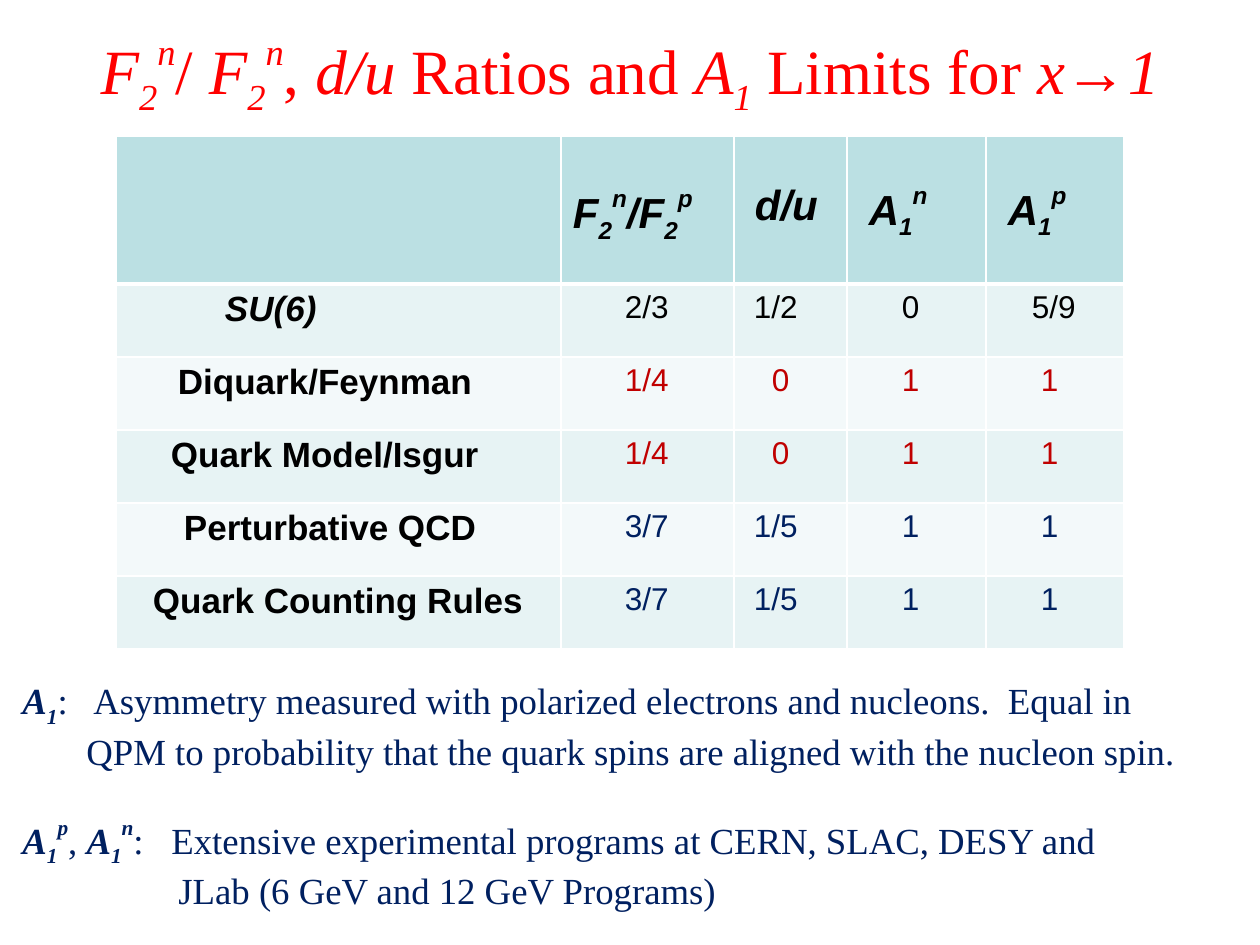
import pptx
import pptx.util
import pptx.dml.color
import pptx.enum.text
import pptx.oxml.ns
import lxml.etree

PX = 7257.14  # EMU per px
COLORS = {"red": "FF0000", "black": "000000", "navy": "002060", "crimson": "C00000",
          "white": "FFFFFF", "head": "BBE0E3", "odd": "E7F3F4", "even": "F3F9FA"}


def px(n):
    return pptx.util.Emu(round(n * PX))


def add_runs(p, runs, name, size, color, sup=50):
    """Add (text, marks) runs; marks: b bold, i italic, _ subscript, ^ superscript."""
    for text, marks in runs:
        r = p.add_run()
        r.text = text
        fmt = {"name": name, "size": pptx.util.Pt(size), "bold": "b" in marks, "italic": "i" in marks}
        for key, value in fmt.items():
            setattr(r.font, key, value)
        r.font.color.rgb = pptx.dml.color.RGBColor.from_string(COLORS[color])
        base = -25 if "_" in marks else sup if "^" in marks else 0
        if base:
            r._r.get_or_add_rPr().set("baseline", str(base * 1000))


prs = pptx.Presentation()
prs.slide_width, prs.slide_height = px(1260), px(945)
s = prs.slides.add_slide(prs.slide_layouts[6])

# Title
tf = s.shapes.add_textbox(px(42), px(21), px(1176), px(105)).text_frame
tf.word_wrap = True
tf.vertical_anchor = pptx.enum.text.MSO_ANCHOR.MIDDLE
p = tf.paragraphs[0]
p.alignment = pptx.enum.text.PP_ALIGN.CENTER
title = [("F", "i"), ("2", "i_"), ("n", "i^"), ("/", ""), (" F", "i"), ("2", "i_"), ("n", "i^"),
         (", ", ""), ("d/u", "i"), (" Ratios and ", ""), ("A", "i"), ("1", "i_"),
         (" Limits for ", ""), ("x", "i"), ("→", ""), ("1", "i")]
add_runs(p, title, "Times New Roman", 36, "red", sup=46)

# Table: each cell is (runs, left inset, top inset, size)
headers = [([], 12, 6, 24),
           ([("F", "bi"), ("2", "bi_"), ("n", "bi^"), ("/F", "bi"), ("2", "bi_"), ("p", "bi^")], 12, 50, 24),
           ([("d/u", "bi")], 21, 46, 24),
           ([("A", "bi"), ("1", "bi_"), ("n", "bi^")], 22, 46, 24),
           ([("A", "bi"), ("1", "bi_"), ("p", "bi^")], 22, 46, 24)]
models = [("SU(6)", "bi", 109, "black", ["2/3", "1/2", "0", "5/9"]),
          ("Diquark/Feynman", "b", 62, "crimson", ["1/4", "0", "1", "1"]),
          ("Quark Model/Isgur", "b", 55, "crimson", ["1/4", "0", "1", "1"]),
          ("Perturbative QCD", "b", 68, "navy", ["3/7", "1/5", "1", "1"]),
          ("Quark Counting Rules", "b", 37, "navy", ["3/7", "1/5", "1", "1"])]
insets = [64, 29, 55, 55]
digit = 9  # half the width by which a fraction exceeds a single digit

rows = [("black", headers)]
for model, marks, inset, color, values in models:
    cells = [([(model, marks)], inset, 6, 20)]
    for col, value in enumerate(values):
        shift = 0
        if col == 1:
            shift = -digit if "/" in value else digit
        elif col == 3 and "/" in value:
            shift = -digit
        cells.append(([(value, "")], insets[col] + shift, 6, 18))
    rows.append((color, cells))

widths = [445, 173, 113, 139, 138]
heights = [148] + [73] * len(models)
tbl = s.shapes.add_table(len(rows), len(widths), px(116), px(136), px(sum(widths)), px(sum(heights))).table
tbl.first_row = tbl.horz_banding = False
for column, width in zip(tbl.columns, widths):
    column.width = px(width)
for i, (color, cells) in enumerate(rows):
    tbl.rows[i].height = px(heights[i])
    fill = "head" if i == 0 else "odd" if i % 2 else "even"
    for j, (runs, left, top, size) in enumerate(cells):
        cell = tbl.cell(i, j)
        margins = {"margin_left": px(left), "margin_right": px(4), "margin_top": px(top)}
        for key, value in margins.items():
            setattr(cell, key, value)
        text_color = "black" if j == 0 else color
        add_runs(cell.text_frame.paragraphs[0], runs, "Arial", size, text_color)
        tcPr = cell._tc.get_or_add_tcPr()
        for side in "LRTB":
            thick = (i == 0 and side == "B") or (i == 1 and side == "T")
            ln = lxml.etree.SubElement(tcPr, pptx.oxml.ns.qn("a:ln" + side), w=str(38100 if thick else 12700))
            line = lxml.etree.SubElement(ln, pptx.oxml.ns.qn("a:solidFill"))
            lxml.etree.SubElement(line, pptx.oxml.ns.qn("a:srgbClr"), val=COLORS["white"])
        cell.fill.solid()
        cell.fill.fore_color.rgb = pptx.dml.color.RGBColor.from_string(COLORS[fill])

# Definitions: (runs, left indent, tab stop, space before in points)
notes = [([("A", "bi"), ("1", "bi_"),
           (":\tAsymmetry measured with polarized electrons and nucleons.  Equal in", "")], 0, 71, 0),
         ([("QPM to probability that the quark spins are aligned with the nucleon spin.", "")], 64, 0, 0),
         ([("A", "bi"), ("1", "bi_"), ("p", "bi^"), (", ", ""), ("A", "bi"), ("1", "bi_"), ("n", "bi^"),
           (":\tExtensive experimental programs at CERN, SLAC, DESY and", "")], 0, 149, 24),
         ([("JLab (6 GeV and 12 GeV Programs)", "")], 156, 0, 0)]
tf = s.shapes.add_textbox(px(10), px(672), px(1239), px(236)).text_frame
tf.word_wrap = True
for k, (runs, indent, tab, before) in enumerate(notes):
    p = tf.paragraphs[0] if k == 0 else tf.add_paragraph()
    p.space_before = pptx.util.Pt(before)
    pPr = p._p.get_or_add_pPr()
    pPr.set("marL", str(px(indent)))
    if tab:
        tabs = lxml.etree.SubElement(pPr, pptx.oxml.ns.qn("a:tabLst"))
        lxml.etree.SubElement(tabs, pptx.oxml.ns.qn("a:tab"), pos=str(px(tab)), algn="l")
    add_runs(p, runs, "Times New Roman", 21, "navy")

prs.save("out.pptx")
